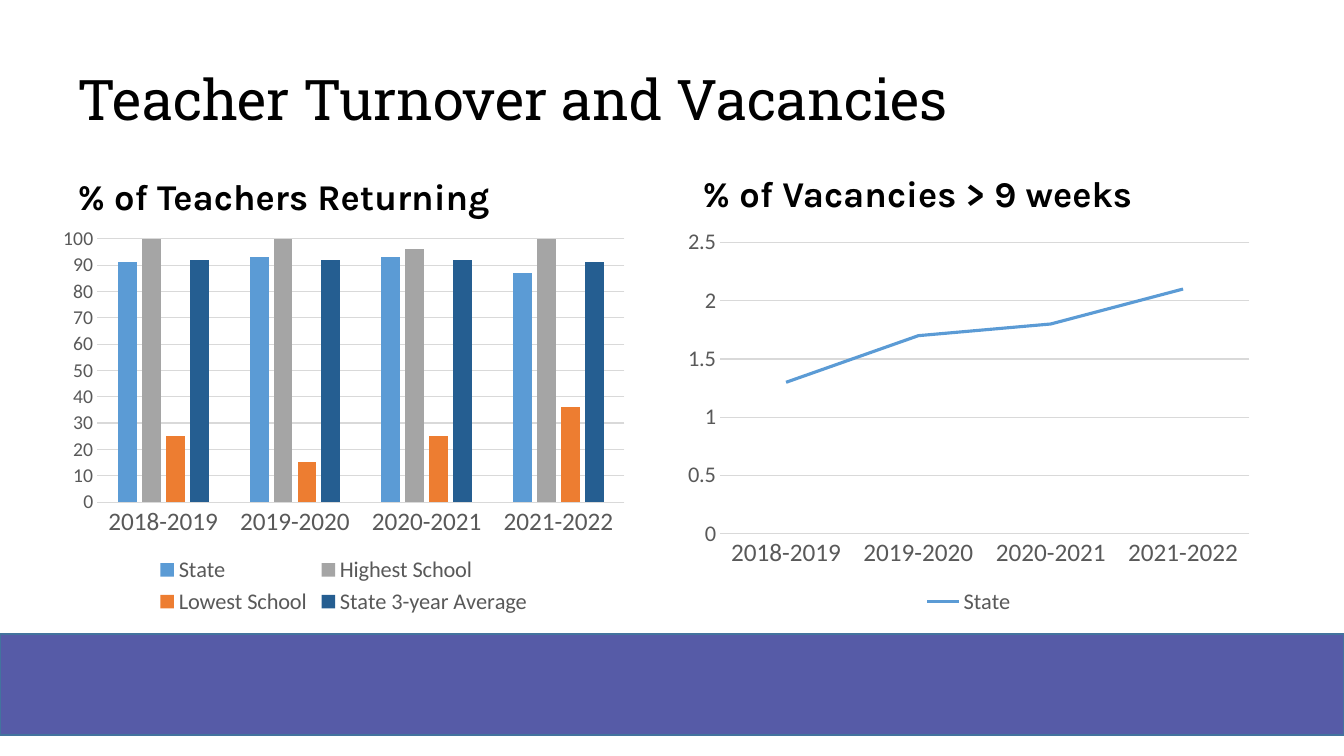
import pptx
import pptx.chart.data
import pptx.dml.color
import pptx.enum.chart
import pptx.enum.shapes
import pptx.enum.text
import pptx.util

Pt = pptx.util.Pt
RGBColor = pptx.dml.color.RGBColor
XL_CHART_TYPE = pptx.enum.chart.XL_CHART_TYPE
XL_TICK_MARK = pptx.enum.chart.XL_TICK_MARK
MSO_ANCHOR = pptx.enum.text.MSO_ANCHOR

BLACK = RGBColor(0x00, 0x00, 0x00)
GRAY_TEXT = RGBColor(0x59, 0x59, 0x59)
GRID = RGBColor(0xD9, 0xD9, 0xD9)
PURPLE = RGBColor(0x56, 0x5B, 0xA7)
BAND_EDGE = RGBColor(0x43, 0x73, 0x9E)
BLUE = RGBColor(0x5B, 0x9B, 0xD5)
GRAY = RGBColor(0xA5, 0xA5, 0xA5)
ORANGE = RGBColor(0xED, 0x7D, 0x31)
NAVY = RGBColor(0x25, 0x5E, 0x91)

YEARS = ["2018-2019", "2019-2020", "2020-2021", "2021-2022"]
RETURNING = [
    ("State", [91, 93, 93, 87], BLUE),
    ("Highest School", [100, 100, 96, 100], GRAY),
    ("Lowest School", [25, 15, 25, 36], ORANGE),
    ("State 3-year Average", [92, 92, 92, 91], NAVY),
]
VACANCIES = [("State", [1.3, 1.7, 1.8, 2.1], BLUE)]


def fill_placeholder(sp, text, box, font_name, size, bold, spacing, anchor):
    sp.left, sp.top, sp.width, sp.height = [Pt(v) for v in box]
    tf = sp.text_frame
    tf.text = text
    tf.word_wrap = True
    tf.auto_size = pptx.enum.text.MSO_AUTO_SIZE.NONE
    tf.vertical_anchor = anchor
    p = tf.paragraphs[0]
    p.alignment = pptx.enum.text.PP_ALIGN.LEFT
    p.line_spacing = spacing
    p.space_before = Pt(0)
    p.font.name = font_name
    p.font.size = Pt(size)
    p.font.bold = bold
    p.font.color.rgb = BLACK


def add_year_chart(s, kind, box, series, top_value, step, value_size):
    """Add a chart by school year and return it."""
    data = pptx.chart.data.CategoryChartData()
    data.categories = YEARS
    for name, values, _ in series:
        data.add_series(name, values)
    chart = s.shapes.add_chart(kind, *[Pt(v) for v in box], data).chart
    chart.has_title = False
    chart.font.name = "Calibri"
    chart.font.size = Pt(10)
    chart.font.color.rgb = BLACK

    chart.has_legend = True
    chart.legend.position = pptx.enum.chart.XL_LEGEND_POSITION.BOTTOM
    chart.legend.include_in_layout = False
    years, values = chart.category_axis, chart.value_axis
    for font, size in [(chart.legend.font, 16), (years.tick_labels.font, 18),
                       (values.tick_labels.font, value_size)]:
        font.name = "Calibri"
        font.size = Pt(size)
        font.color.rgb = GRAY_TEXT

    for axis in (years, values):
        axis.major_tick_mark = XL_TICK_MARK.NONE
        axis.minor_tick_mark = XL_TICK_MARK.NONE
    values.minimum_scale = 0
    values.maximum_scale = top_value
    values.major_unit = step
    values.has_major_gridlines = True
    values.format.line.fill.background()
    for line in (years.format.line, values.major_gridlines.format.line):
        line.color.rgb = GRID
        line.width = Pt(0.75)
    return chart


prs = pptx.Presentation()
prs.slide_width = Pt(960)
prs.slide_height = Pt(540)
s = prs.slides.add_slide(prs.slide_layouts.get_by_name("Comparison"))

# Title and chart headings
title, left_heading, left_content, right_heading, right_content = s.placeholders
for sp in (left_content, right_content):
    sp.element.getparent().remove(sp.element)
fill_placeholder(title, "Teacher Turnover and Vacancies", (48, 26, 864, 94),
                 "Roboto Slab", 40, False, 0.9, MSO_ANCHOR.MIDDLE)
for sp, text, x, height in [
    (left_heading, "% of Teachers Returning", 48, 32.4),
    (right_heading, "% of Vacancies > 9 weeks", 494.6, 30.3),
]:
    fill_placeholder(sp, text, (x, 126, 417.6, height),
                     "Karla", 25.9, True, 0.7, MSO_ANCHOR.BOTTOM)

# Footer band
band = s.shapes.add_shape(pptx.enum.shapes.MSO_SHAPE.RECTANGLE,
                          Pt(0), Pt(453), Pt(960), Pt(72))
band.shadow.inherit = False
band.fill.solid()
band.fill.fore_color.rgb = PURPLE
band.line.color.rgb = BAND_EDGE
band.line.width = Pt(1)

# Teachers returning
chart = add_year_chart(s, XL_CHART_TYPE.COLUMN_CLUSTERED,
                       (36.7, 156.2, 417.6, 286.6), RETURNING, 100, 10, 14)
plot = chart.plots[0]
plot.vary_by_categories = False
plot.gap_width = 219
plot.overlap = -27
for bars, (_, _, color) in zip(plot.series, RETURNING):
    bars.format.fill.solid()
    bars.format.fill.fore_color.rgb = color

# Long vacancies
chart = add_year_chart(s, XL_CHART_TYPE.LINE,
                       (483.1, 157.7, 417.6, 285.1), VACANCIES, 2.5, 0.5, 16)
plot = chart.plots[0]
plot.vary_by_categories = False
for curve, (_, _, color) in zip(plot.series, VACANCIES):
    curve.smooth = False
    curve.format.line.color.rgb = color
    curve.format.line.width = Pt(2.25)

prs.save("out.pptx")
